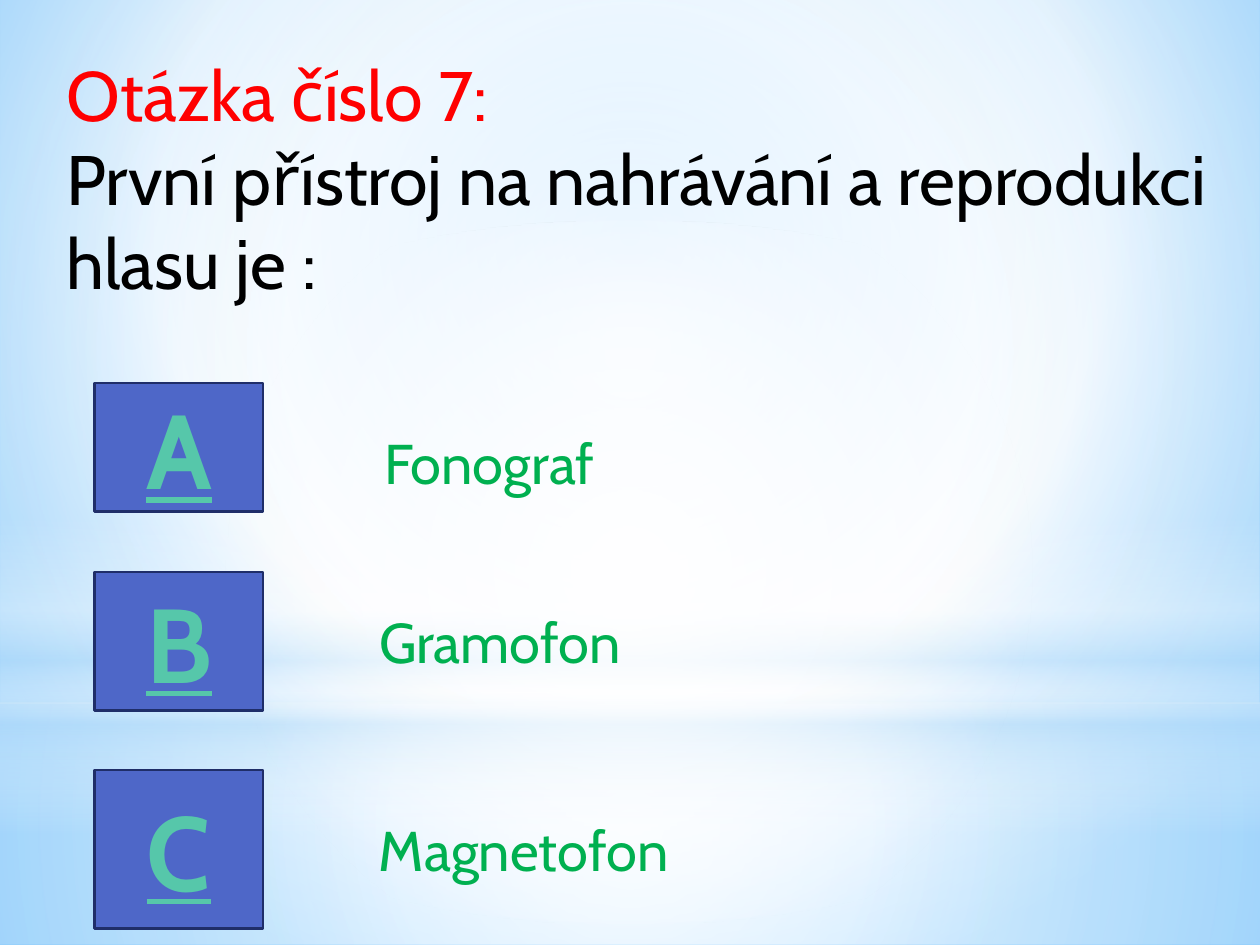
import pptx
import pptx.dml.color
import pptx.enum.shapes
import pptx.enum.text
import pptx.oxml
import pptx.oxml.ns
import pptx.util

Inches = pptx.util.Inches
ALIGN = pptx.enum.text.PP_ALIGN
AUTO_SIZE = pptx.enum.text.MSO_AUTO_SIZE
PRESET = pptx.enum.shapes.MSO_SHAPE

COLORS = {
    "white": "FFFFFF",
    "sky": "9ED5FF",
    "deep_sky": "5BB9FF",
    "haze": "B4DCFA",
    "button": "4E67C8",
    "button_line": "1F2E69",
    "letter": "56C7AA",
    "heading": "FF0000",
    "question": "000000",
    "answer": "00B050",
}
CENTER = (50, 50, 50, 50)


def rgb(name):
    return pptx.dml.color.RGBColor.from_string(COLORS[name])


def gradient(stops, focus=None):
    stop_xml = "".join(
        f'<a:gs pos="{position * 1000}"><a:srgbClr val="{COLORS[color]}">'
        f'<a:alpha val="{alpha * 1000}"/></a:srgbClr></a:gs>'
        for position, color, alpha in stops
    )
    if focus:
        left, top, right, bottom = (side * 1000 for side in focus)
        direction = (
            f'<a:path path="circle"><a:fillToRect l="{left}" t="{top}" '
            f'r="{right}" b="{bottom}"/></a:path>'
        )
    else:
        direction = '<a:lin ang="5400000" scaled="0"/>'
    return pptx.oxml.parse_xml(
        f'<a:gradFill {pptx.oxml.ns.nsdecls("a")} rotWithShape="1">'
        f"<a:gsLst>{stop_xml}</a:gsLst>{direction}</a:gradFill>"
    )


def write(paragraph, text, size, color, bold=False, underline=False):
    run = paragraph.add_run()
    run.text = text
    run.font.name = "Cabin"
    run.font.size = pptx.util.Pt(size)
    run.font.bold = bold
    run.font.underline = underline
    run.font.color.rgb = rgb(color)


class QuizSlide:
    """Holds the style and the current slide of the quiz."""

    heading_size = 40
    answer_size = 32
    letter_size = 60
    line_width = 1.25

    def __init__(self, slide):
        self.slide = slide

    def background(self, stops, focus):
        self.slide.background.fill.solid()
        properties = self.slide.element.find(".//" + pptx.oxml.ns.qn("p:bgPr"))
        properties.replace(properties[0], gradient(stops, focus))

    def shape(self, preset, box, color):
        shape = self.slide.shapes.add_shape(preset, *map(Inches, box))
        shape.shadow.inherit = False
        shape.fill.solid()
        shape.fill.fore_color.rgb = rgb(color)
        return shape

    def glow(self, preset, top, height, stops, focus=None):
        shape = self.shape(preset, (0, top, 10, height), "white")
        shape.line.fill.background()
        properties = shape.element.spPr
        solid = properties.find(pptx.oxml.ns.qn("a:solidFill"))
        properties.replace(solid, gradient(stops, focus))

    def button(self, letter, top, height):
        shape = self.shape(PRESET.RECTANGLE, (0.75, top, 1.34, height), "button")
        shape.line.color.rgb = rgb("button_line")
        shape.line.width = pptx.util.Pt(self.line_width)
        shape.text_frame.vertical_anchor = pptx.enum.text.MSO_ANCHOR.MIDDLE
        paragraph = shape.text_frame.paragraphs[0]
        paragraph.alignment = ALIGN.CENTER
        write(paragraph, letter, self.letter_size, "letter", bold=True, underline=True)

    def text_box(self, box, wrap=True):
        frame = self.slide.shapes.add_textbox(*map(Inches, box)).text_frame
        frame.word_wrap = wrap
        frame.auto_size = AUTO_SIZE.SHAPE_TO_FIT_TEXT
        return frame.paragraphs[0]

    def question(self, heading, text):
        paragraph = self.text_box((0.43, 0.36, 9.57, 2.12))
        write(paragraph, heading, self.heading_size, "heading")
        paragraph.add_line_break()
        write(paragraph, text, self.heading_size, "question")

    def answer(self, text, left, top, width, wrap):
        paragraph = self.text_box((left, top, width, 0.64), wrap)
        write(paragraph, text, self.answer_size, "answer")


def main():
    presentation = pptx.Presentation()
    presentation.slide_width = Inches(10)
    presentation.slide_height = Inches(7.5)
    quiz = QuizSlide(presentation.slides.add_slide(presentation.slide_layouts[6]))

    quiz.background(
        [(0, "sky", 100), (60, "white", 100), (100, "deep_sky", 100)], (20, 10, 20, 60)
    )
    quiz.glow(
        PRESET.RECTANGLE, 5.58, 1.92,
        [(0, "white", 91), (37, "white", 76), (100, "haze", 79)], CENTER,
    )
    quiz.glow(
        PRESET.RECTANGLE, 0, 5.58,
        [(0, "white", 89), (48, "white", 62), (100, "haze", 79)], CENTER,
    )
    quiz.glow(
        PRESET.RECTANGLE, 4.12, 2.5,
        [(0, "white", 0), (29, "white", 30), (45, "haze", 40),
         (55, "white", 26), (65, "haze", 60), (100, "white", 0)],
    )
    quiz.glow(
        PRESET.OVAL, 1.75, 5.58, [(0, "white", 100), (56, "white", 0)], CENTER
    )

    quiz.question(
        "Otázka číslo 7:", "První přístroj na nahrávání a reprodukci hlasu je :"
    )
    for letter, top, height in (("A", 3.04, 1.02), ("B", 4.54, 1.1), ("C", 6.11, 1.26)):
        quiz.button(letter, top, height)
    quiz.answer("Fonograf", 2.95, 3.35, 1.97, wrap=False)
    quiz.answer("Gramofon", 2.91, 4.77, 2.18, wrap=False)
    quiz.answer("Magnetofon", 2.91, 6.42, 2.64, wrap=True)

    presentation.save("out.pptx")


if __name__ == "__main__":
    main()
